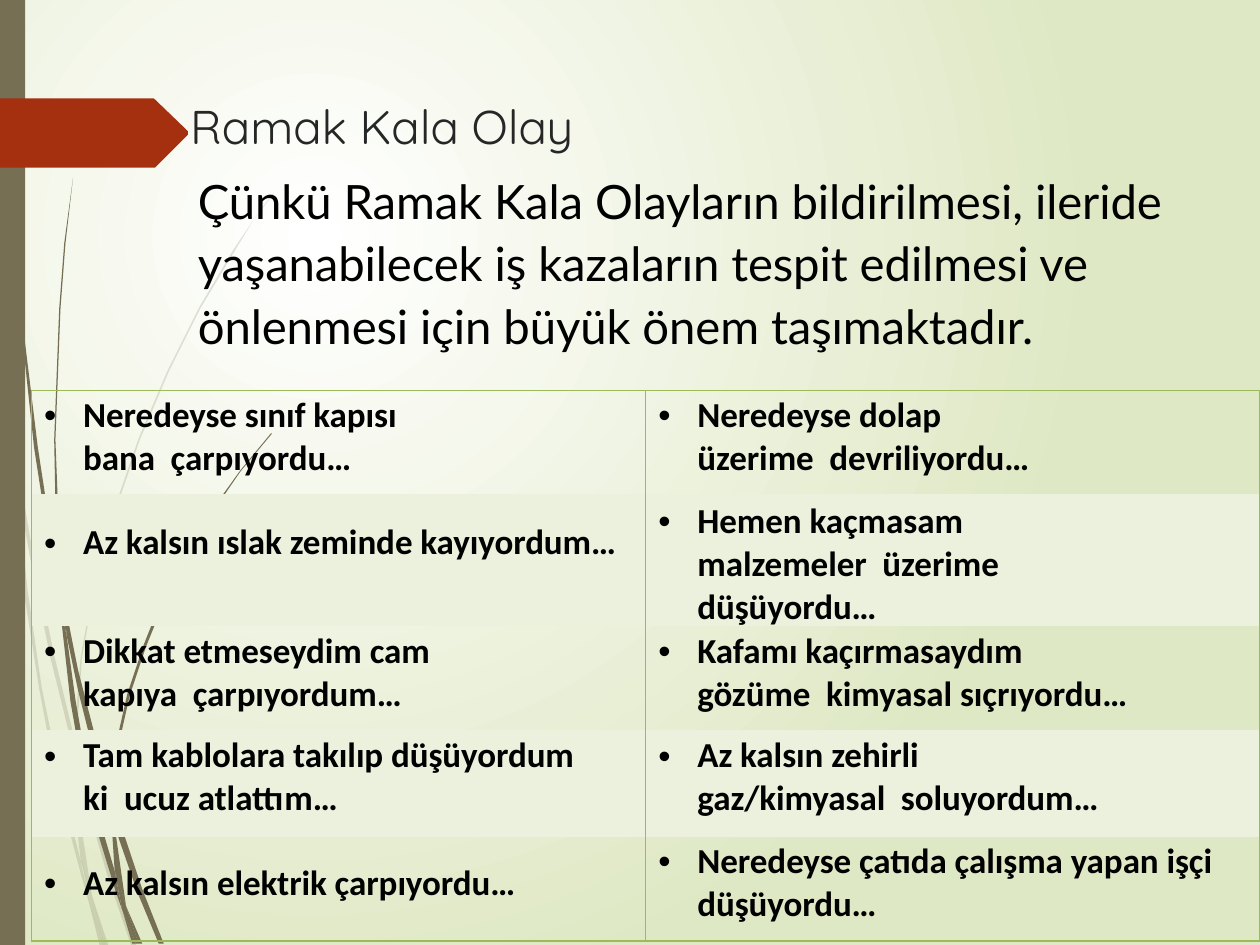
from lxml import etree
from pptx import Presentation
from pptx.dml.color import RGBColor
from pptx.enum.shapes import MSO_SHAPE
from pptx.enum.text import MSO_ANCHOR
from pptx.oxml.ns import qn
from pptx.util import Emu, Inches, Pt

RECT = MSO_SHAPE.RECTANGLE
TOP = MSO_ANCHOR.TOP

WHITE = RGBColor(0xFF, 0xFF, 0xFF)
LIME = RGBColor(0xDF, 0xE8, 0xC4)
OLIVE = RGBColor(0x76, 0x6F, 0x54)
RUST = RGBColor(0xA5, 0x30, 0x10)
PALE = RGBColor(0xEB, 0xF1, 0xDD)
GREEN = RGBColor(0x9B, 0xBA, 0x58)
DARK = RGBColor(0x26, 0x26, 0x26)
BLACK = RGBColor(0, 0, 0)

WIDE, HIGH = Inches(10), Inches(7.5)
PLAIN = "{2D5ABB26-0587-4C30-8999-92F81FD0307C}"  # no style, no grid

# Grass blades as outlines, in inches
FAINT = [
    [(.08, 3.5), (.06, 3.22), (0, 2.82), (0, 2.99), (.07, 3.44)],
    [(.4, 5.22), (.59, 5.99), (.59, 5.86), (.43, 5.2), (.25, 4.33),
     (.1, 3.45), (.12, 3.76), (.25, 4.49)],
    [(.64, 6.07), (.61, 5.96), (.61, 6.1), (.85, 6.94), (1.04, 7.5),
     (1.08, 7.5), (.88, 6.92)],
    [(.83, 7.5), (.86, 7.5), (.73, 7.11)],
    [(.64, 6.83), (.48, 6.19), (.33, 5.45), (.22, 4.69), (.12, 3.76),
     (.08, 3.5), (.19, 4.7), (.31, 5.46), (.45, 6.21), (.64, 6.93),
     (.7, 7.14), (.69, 7.07)],
    [(.58, 5.99), (.6, 6.46), (.64, 6.83), (.73, 7.11), (.63, 6.46),
     (.61, 6.1)],
    [(.61, 5.84), (.65, 5.22), (.76, 4.62), (.92, 4.04), (1.11, 3.49),
     (1.34, 2.95), (1.59, 2.45), (1.87, 1.98), (2.01, 1.75), (2.17, 1.54),
     (2.17, 1.53), (2.01, 1.75), (1.86, 1.97), (1.58, 2.44), (1.33, 2.94),
     (1.1, 3.48), (.91, 4.03), (.75, 4.61), (.64, 5.22), (.59, 5.84),
     (.59, 5.86), (.61, 5.96)],
    [(.7, 7.14), (.79, 7.5), (.82, 7.5)],
    [(.61, 6.08), (.61, 5.96), (.59, 5.86), (.58, 5.99)],
    [(.67, 6.92), (.65, 6.83), (.7, 7.14), (.82, 7.5), (.83, 7.5),
     (.73, 7.11)],
]
STRONG = [
    [(.05, 1.1), (.14, 2.33), (.27, 3.55), (.46, 4.77), (.47, 4.81),
     (.45, 4.53), (.3, 3.55), (.15, 2.32), (.06, 1.09), (.04, .48),
     (.03, 0), (.02, 0), (.03, .48)],
    [(.73, 5.92), (.88, 6.45), (.88, 6.31), (.77, 5.9), (.62, 5.32),
     (.5, 4.72), (.53, 5.05), (.62, 5.48)],
    [(.94, 6.49), (.91, 6.41), (.91, 6.56), (1.09, 7.08), (1.26, 7.49),
     (1.3, 7.49), (1.13, 7.06)],
    [(.91, 6.91), (.81, 6.57), (.69, 6.07), (.6, 5.56), (.53, 5.05),
     (.47, 4.77), (.56, 5.57), (.65, 6.08), (.77, 6.59), (.92, 7.08),
     (.97, 7.22), (.96, 7.17)],
    [(.5, 4.72), (.48, 4.53), (.44, 3.49), (.48, 2.45), (.52, 1.93),
     (.58, 1.41), (.51, 1.93), (.47, 2.45), (.43, 3.49), (.45, 4.49),
     (.49, 4.72)],
    [(1.1, 7.49), (1.13, 7.49), (1, 7.19)],
    [(.47, 4.77), (.53, 5.05), (.5, 4.72), (.45, 4.49), (.45, 4.53)],
    [(.91, 6.33), (.94, 5.92), (1.03, 5.52), (1.16, 5.13), (1.31, 4.76),
     (1.69, 4.06), (1.91, 3.74), (2.16, 3.44), (2.15, 3.44), (1.91, 3.73),
     (1.68, 4.05), (1.29, 4.74), (1.14, 5.12), (1.01, 5.51), (.92, 5.91),
     (.88, 6.31), (.91, 6.41)],
    [(.97, 7.22), (1.05, 7.49), (1.08, 7.49)],
    [(.88, 6.45), (.91, 6.91), (1, 7.19), (.91, 6.56)],
    [(.88, 6.45), (.91, 6.56), (.91, 6.41), (.88, 6.31)],
    [(.96, 7.06), (.91, 6.91), (.97, 7.22), (1.08, 7.49), (1.1, 7.49),
     (1, 7.19)],
]
ARROW = [(0, .78), (1.22, .78), (1.49, 1.04), (1.49, 1.07), (1.23, 1.33),
         (0, 1.33)]

# Each cell: text, top inset, right indent
ROWS = [
    (.82, ("Neredeyse sınıf kapısı bana  çarpıyordu…", .03, 1.65),
     ("Neredeyse dolap üzerime  devriliyordu…", .03, 1.72)),
    (1, ("Az kalsın ıslak zeminde kayıyordum…", .22, 0),
     ("Hemen kaçmasam malzemeler  üzerime düşüyordu…", .05, 1.78)),
    (.82, ("Dikkat etmeseydim cam kapıya  çarpıyordum…", .03, 1.4),
     ("Kafamı kaçırmasaydım gözüme  kimyasal sıçrıyordu…", .03, 1)),
    (.85, ("Tam kablolara takılıp düşüyordum ki  ucuz atlattım…", .04, .45),
     ("Az kalsın zehirli gaz/kimyasal  soluyordum…", .04, 1.23)),
    (.83, ("Az kalsın elektrik çarpıyordu…", .2, 0),
     ("Neredeyse çatıda çalışma yapan işçi\ndüşüyordu…", .03, 0)),
]


def paint(shape, color, alpha=None):
    shape.shadow.inherit = False
    shape.line.fill.background()
    shape.fill.solid()
    shape.fill.fore_color.rgb = color
    if alpha:
        tint = shape.element.spPr.find(".//" + qn("a:srgbClr"))
        etree.SubElement(tint, qn("a:alpha"), val=str(alpha * 1000))


def outline(slide, dots, color, alpha=None):
    first, *rest = [(Inches(x), Inches(y)) for x, y in dots]
    pen = slide.shapes.build_freeform(*first)
    pen.add_line_segments(rest, close=True)
    paint(pen.convert_to_shape(), color, alpha)


def style(para, font, size, color, bold=False):
    for run in para.runs:
        run.font.name, run.font.size = font, Pt(size)
        run.font.color.rgb, run.font.bold = color, bold
        run.font._element.set("spc", "-5")


def indent(para, left, hang=0, right=0):
    props = para._p.get_or_add_pPr()
    for key, inch in (("marL", left), ("indent", hang), ("marR", right)):
        props.set(key, str(Inches(inch)))
    return props


def backdrop(slide):
    fill = slide.background.fill
    fill.gradient()
    for stop, color in zip(fill.gradient_stops, (WHITE, LIME)):
        stop.color.rgb = color
    grad = slide.element.find(".//" + qn("a:gradFill"))
    grad.remove(grad.find(qn("a:lin")))
    ring = etree.SubElement(grad, qn("a:path"), {"path": "circle"})
    etree.SubElement(ring, qn("a:fillToRect"), l="50000", t="50000",
                     r="100000", b="100000")


def heading(slide):
    box = slide.shapes.add_textbox(Inches(1.5), Inches(.59), Inches(8.08),
                                   Inches(2.24))
    frame = box.text_frame
    frame.word_wrap, frame.vertical_anchor = True, TOP
    frame.margin_left = frame.margin_right = frame.margin_bottom = 0
    frame.margin_top = Inches(.18)
    frame.text = ("Ramak Kala Olay\nÇünkü Ramak Kala Olayların bildirilmesi, "
                  "ileride yaşanabilecek iş kazaların tespit edilmesi ve "
                  "önlenmesi için büyük önem taşımaktadır.")
    title, body = frame.paragraphs
    style(title, "Quicksand", 27, DARK)
    indent(title, .01)
    style(body, "Lato", 27, BLACK)
    indent(body, .07)
    body.line_spacing, body.space_before = 1.1, Pt(7.2)


def border(cell, sides):
    props = cell._tc.get_or_add_tcPr()
    for i, side in enumerate(sides):
        line = etree.Element(qn("a:ln" + side), w=str(Pt(1)))
        fill = etree.SubElement(line, qn("a:solidFill"))
        etree.SubElement(fill, qn("a:srgbClr"), val=str(GREEN))
        props.insert(i, line)


def fill_cell(cell, text, top, right):
    cell.margin_left = cell.margin_right = cell.margin_bottom = 0
    cell.margin_top = Inches(top)
    cell.text_frame.text = text
    for i, para in enumerate(cell.text_frame.paragraphs):
        style(para, "Calibri", 20, BLACK, True)
        props = indent(para, .41, 0 if i else -.31, right)
        if i == 0:
            etree.SubElement(props, qn("a:buFont"), typeface="Arial")
            etree.SubElement(props, qn("a:buChar"), char="•")


def events(slide):
    frame = slide.shapes.add_table(len(ROWS), 2, Inches(.25), Inches(3.1),
                                   Inches(9.75), Inches(4.32))
    grid = frame.table
    grid.first_row = grid.horz_banding = False
    frame.element.find(".//" + qn("a:tableStyleId")).text = PLAIN
    last = len(ROWS) - 1
    for r, (tall, *cells) in enumerate(ROWS):
        grid.rows[r].height = Inches(tall)
        for c, data in enumerate(cells):
            cell = grid.cell(r, c)
            fill_cell(cell, *data)
            if r % 2:
                cell.fill.solid()
                cell.fill.fore_color.rgb = PALE
            else:
                cell.fill.background()
            border(cell, "LR" + {0: "T", last: "B"}.get(r, ""))


def main():
    deck = Presentation()
    deck.slide_width, deck.slide_height = WIDE, HIGH
    slide = deck.slides.add_slide(deck.slide_layouts[6])
    backdrop(slide)
    # Grass, side bar and arrow
    for blade in FAINT:
        outline(slide, blade, OLIVE, 20)
    for blade in STRONG:
        outline(slide, blade, OLIVE)
    paint(slide.shapes.add_shape(RECT, 0, 0, Emu(WIDE // 50), HIGH), OLIVE)
    outline(slide, ARROW, RUST)
    # Text and table
    heading(slide)
    events(slide)
    deck.save("out.pptx")


if __name__ == "__main__":
    main()
